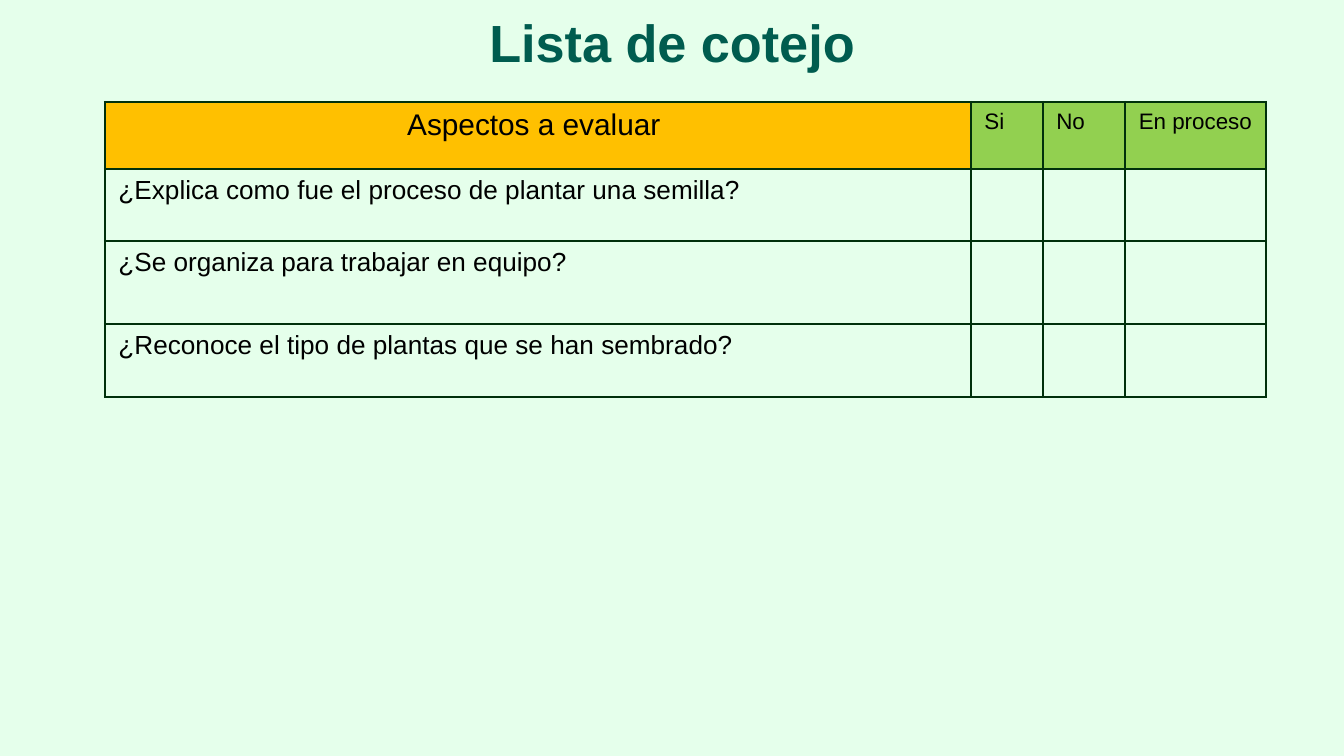
from lxml.etree import SubElement as Sub
from pptx import Presentation
from pptx.dml.color import RGBColor
from pptx.enum.text import MSO_ANCHOR as Anchor, PP_ALIGN as Align
from pptx.oxml.ns import qn
from pptx.util import Pt

PX = 6804  # EMU per px, 134.4 px to the inch
INK = "000000"
EDGE = "00300B"
GOLD = "FFC000"
LIME = "92D050"

COLS = [866, 72, 82, 141]
ROWS = [67, 72, 83, 73]
HEADS = [
    ("Aspectos a evaluar ", 16, GOLD, Align.CENTER),
    ("Si", 12, LIME, Align.LEFT),
    ("No", 12, LIME, Align.LEFT),
    ("En proceso", 12, LIME, Align.CENTER),
]
ITEMS = [
    "¿Explica como fue el proceso de plantar una semilla?",
    "¿Se organiza para trabajar en equipo?",
    "¿Reconoce el tipo de plantas que se han sembrado?",
]


def px(*nums):
    return [num * PX for num in nums]


def tint(code):
    return RGBColor.from_string(code)


def put(obj, opts):
    for key, val in opts.items():
        setattr(obj, key, val)


def write(frame, text, size, color, align, bold=False):
    para = frame.paragraphs[0]
    para.alignment = align
    run = para.add_run()
    run.text = text
    put(run.font, {"name": "Arial", "size": Pt(size), "bold": bold})
    run.font.color.rgb = tint(color)


def border(cell, color, width):
    # Edge lines must come before the fill in the cell properties
    props = cell._tc.get_or_add_tcPr()
    for pos, tag in enumerate(("a:lnL", "a:lnR", "a:lnT", "a:lnB")):
        line = Sub(props, qn(tag), w=str(Pt(width)))
        fill = Sub(line, qn("a:solidFill"))
        Sub(fill, qn("a:srgbClr"), val=color)
        props.insert(pos, line)


def add_title(slide, text):
    title = slide.shapes.title
    left, top, width, height = px(105, 0, 1134, 84)
    put(title, {"left": left, "top": top, "width": width, "height": height})
    frame = title.text_frame
    frame.vertical_anchor = Anchor.MIDDLE
    write(frame, text, 28, "005C4F", Align.CENTER, True)


def add_list(slide):
    box = px(105, 102, sum(COLS), sum(ROWS))
    table = slide.shapes.add_table(len(ROWS), len(COLS), *box).table
    put(table, {"first_row": False, "horz_banding": False})
    for col, width in zip(table.columns, px(*COLS)):
        col.width = width
    for row, height in zip(table.rows, px(*ROWS)):
        row.height = height

    # Plain grid
    for cell in table.iter_cells():
        cell.fill.background()
        border(cell, EDGE, 1.5)

    # Header row
    for num, (text, size, color, align) in enumerate(HEADS):
        cell = table.cell(0, num)
        cell.fill.solid()
        cell.fill.fore_color.rgb = tint(color)
        write(cell.text_frame, text, size, INK, align)

    # Questions
    for num, text in enumerate(ITEMS, 1):
        write(table.cell(num, 0).text_frame, text, 14, INK, Align.LEFT)


def main():
    deck = Presentation()
    deck.slide_width, deck.slide_height = px(1344, 756)
    slide = deck.slides.add_slide(deck.slide_layouts[5])
    back = slide.background.fill
    back.solid()
    back.fore_color.rgb = tint("E5FFEB")
    add_title(slide, "Lista de cotejo")
    add_list(slide)
    deck.save("out.pptx")


if __name__ == "__main__":
    main()
